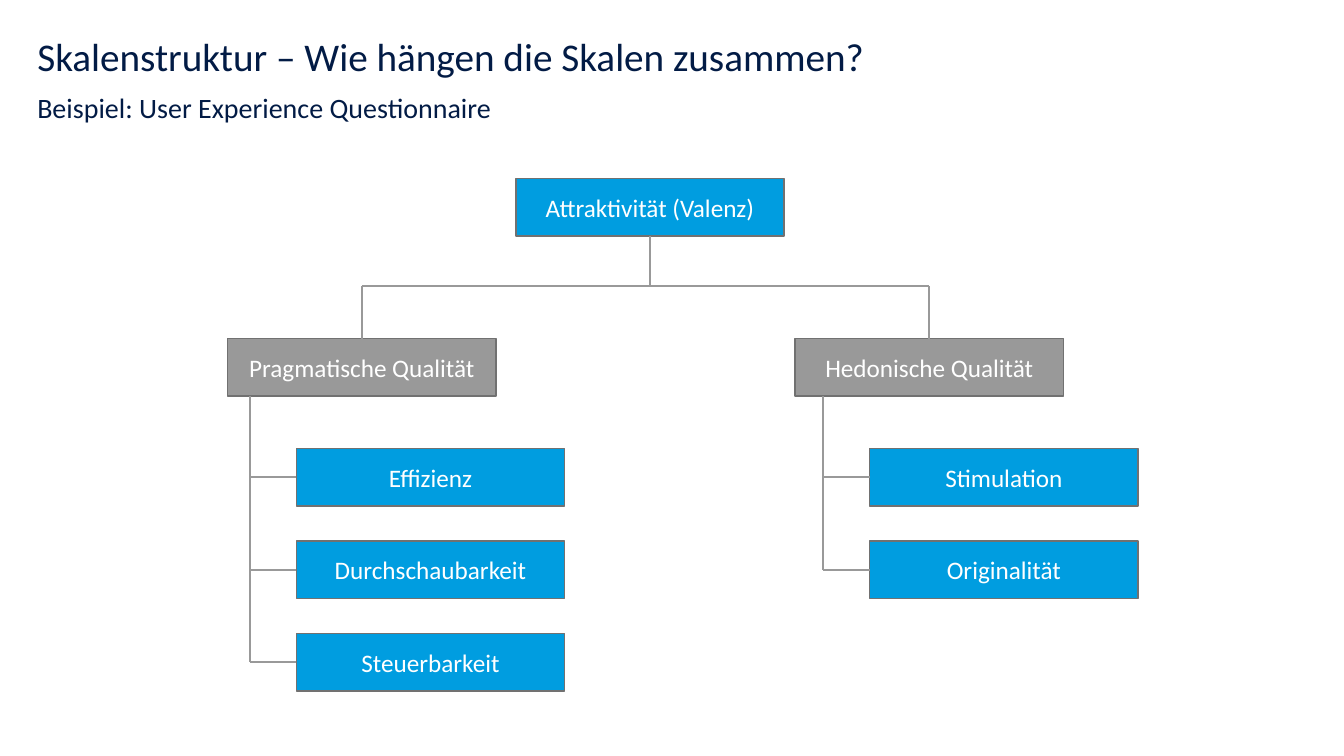
from lxml.etree import SubElement
from pptx import Presentation
from pptx.dml.color import RGBColor
from pptx.enum.shapes import MSO_CONNECTOR, MSO_SHAPE
from pptx.enum.text import MSO_ANCHOR, PP_ALIGN
from pptx.oxml.ns import qn
from pptx.util import Cm, Pt

COLORS = {
    "navy": "021B45",
    "blue": "009DE0",
    "gray": "999999",
    "edge": "717171",
    "white": "FFFFFF",
}
HUES = {name: RGBColor.from_string(code) for name, code in COLORS.items()}
BOX_W, BOX_H = 6.76, 1.45
ROOT_X, ROOT_Y = 13, 4.5
BAR_Y = 7.21
GROUP_Y = 8.53
LEAF_Y, STEP = 11.3, 2.33

# name, left edge, trunk position, left edge of the leaves, leaves
GROUPS = [
    ("Pragmatische Qualität", 5.74, 6.3, 7.47,
     ["Effizienz", "Durchschaubarkeit", "Steuerbarkeit"]),
    ("Hedonische Qualität", 20.04, 20.73, 21.92,
     ["Stimulation", "Originalität"]),
]

deck = Presentation()
deck.slide_width, deck.slide_height = Cm(33.87), Cm(19.05)
slide = deck.slides.add_slide(deck.slide_layouts[5])
shapes = slide.shapes


def add_box(text, x, y, fill):
    box = shapes.add_shape(MSO_SHAPE.RECTANGLE, Cm(x), Cm(y), Cm(BOX_W), Cm(BOX_H))
    box.shadow.inherit = False
    box.fill.solid()
    box.fill.fore_color.rgb = HUES[fill]
    box.line.color.rgb = HUES["edge"]
    box.line.width = Pt(1)
    frame = box.text_frame
    frame.text = text
    frame.vertical_anchor = MSO_ANCHOR.MIDDLE
    para = frame.paragraphs[0]
    para.alignment = PP_ALIGN.CENTER
    font = para.runs[0].font
    font.name, font.size = "Calibri", Pt(18)
    font.color.rgb = HUES["white"]
    return box


def add_line(x1, y1, x2, y2):
    line = shapes.add_connector(MSO_CONNECTOR.STRAIGHT, Cm(x1), Cm(y1), Cm(x2), Cm(y2))
    line.line.color.rgb = HUES["gray"]
    line.line.width = Pt(1.5)
    SubElement(line.element.spPr, qn("a:effectLst"))
    return line


# Title and subtitle
title = shapes.title
title.left, title.top, title.width, title.height = Cm(0.94), Cm(0.84), Cm(32), Cm(1.27)
title.text_frame.vertical_anchor = MSO_ANCHOR.MIDDLE
sub = shapes.add_textbox(Cm(0.94), Cm(2.29), Cm(32), Cm(0.84))
for shape, text, size in [
    (title, "Skalenstruktur – Wie hängen die Skalen zusammen?", 28),
    (sub, "Beispiel: User Experience Questionnaire", 20),
]:
    frame = shape.text_frame
    frame.word_wrap = True
    frame.margin_left = frame.margin_right = frame.margin_top = frame.margin_bottom = 0
    frame.text = text
    para = frame.paragraphs[0]
    para.alignment = PP_ALIGN.LEFT
    font = para.runs[0].font
    font.name, font.size = "Calibri", Pt(size)
    font.color.rgb = HUES["navy"]
title.text_frame.paragraphs[0].line_spacing = 0.9
sub.text_frame.paragraphs[0].space_before = Pt(10)

# Root of the tree and the bar below it
root = add_box("Attraktivität (Valenz)", ROOT_X, ROOT_Y, "blue")
root_mid = ROOT_X + BOX_W / 2
stem = add_line(root_mid, ROOT_Y + BOX_H, root_mid, BAR_Y)
stem.begin_connect(root, 2)
mids = [left + BOX_W / 2 for _, left, *_ in GROUPS]
add_line(mids[0], BAR_Y, mids[-1], BAR_Y)

# Groups with their leaves
for (name, left, trunk, leaf_x, leaves), mid in zip(GROUPS, mids):
    group = add_box(name, left, GROUP_Y, "gray")
    drop = add_line(mid, BAR_Y, mid, GROUP_Y)
    drop.end_connect(group, 0)
    for i, text in enumerate(leaves):
        y = LEAF_Y + i * STEP
        leaf = add_box(text, leaf_x, y, "blue")
        leaf_mid = y + BOX_H / 2
        twig = add_line(trunk, leaf_mid, leaf_x, leaf_mid)
        twig.end_connect(leaf, 1)
    add_line(trunk, GROUP_Y + BOX_H, trunk, leaf_mid)

deck.save("out.pptx")
